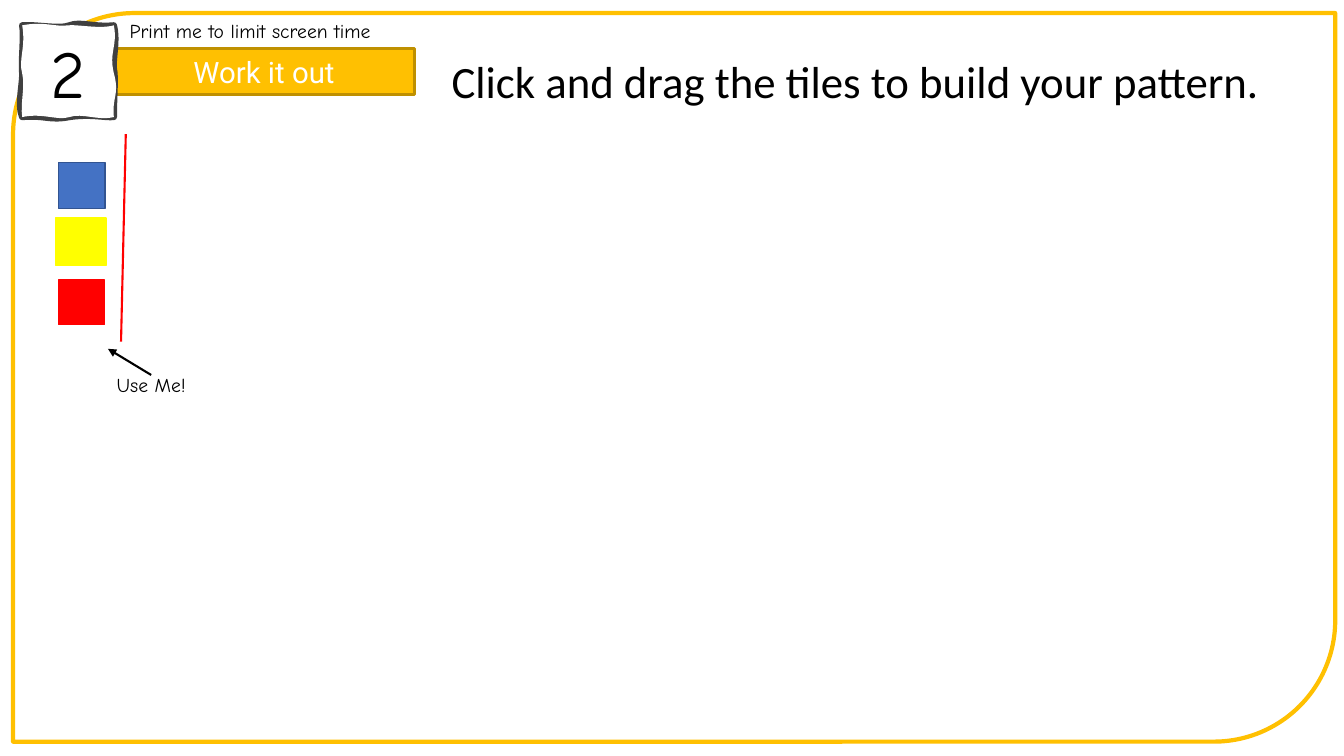
import pptx
import pptx.util
import pptx.dml.color
import pptx.enum.shapes
import pptx.enum.text
import pptx.oxml
import lxml.etree
from dataclasses import dataclass

Cm = pptx.util.Cm
Pt = pptx.util.Pt
SHAPE = pptx.enum.shapes.MSO_SHAPE
ALIGN = pptx.enum.text.PP_ALIGN
ANCHOR = pptx.enum.text.MSO_ANCHOR
FIT = pptx.enum.text.MSO_AUTO_SIZE
SPACE = "http://schemas.openxmlformats.org/drawingml/2006/main"


@dataclass(frozen=True)
class Theme:
    gold: str = "FFC001"
    bronze: str = "BF9000"
    white: str = "FFFFFF"
    black: str = "000000"
    gray: str = "404040"
    red: str = "FF0000"
    blue: str = "4472C4"
    navy: str = "325491"
    yellow: str = "FFFF00"
    hand: str = "Comic Neue"
    label: str = "Roboto"
    body: str = "Calibri"
    small: int = 14
    medium: int = 21
    large: int = 32
    huge: int = 48


THEME = Theme()

LEFT, TOP, SIDE = 0.56, 0.64, 2.31
SKETCH = [
    (0.56, 0.64),
    (0.91, 0.61), (1.5, 0.74), (1.75, 0.64),
    (2.03, 0.53), (2.36, 0.69), (2.87, 0.64),
    (2.97, 1.02), (2.84, 1.5), (2.87, 1.73),
    (2.92, 1.96), (2.87, 2.41), (2.87, 2.95),
    (2.62, 2.97), (2.29, 2.87), (1.75, 2.95),
    (1.24, 3.05), (1.14, 2.9), (0.56, 2.95),
    (0.43, 2.64), (0.58, 2.08), (0.56, 1.83),
    (0.53, 1.57), (0.61, 0.89), (0.56, 0.64),
]
PAPER = [
    (0.56, 0.64),
    (1.09, 0.53), (1.45, 0.69), (1.7, 0.64),
    (1.96, 0.61), (2.51, 0.74), (2.87, 0.64),
    (2.97, 1.17), (2.74, 1.3), (2.87, 1.85),
    (3.02, 2.39), (2.82, 2.44), (2.87, 2.95),
    (2.46, 3.05), (2.08, 2.84), (1.75, 2.95),
    (1.45, 3.05), (1.09, 2.84), (0.56, 2.95),
    (0.51, 2.57), (0.64, 2.21), (0.56, 1.85),
    (0.46, 1.5), (0.66, 1.19), (0.56, 0.64),
]


def color(code):
    return pptx.dml.color.RGBColor.from_string(code)


def node(owner, tag, **attrs):
    return lxml.etree.SubElement(owner, f"{{{SPACE}}}{tag}", attrs)


def paint(shape, fill=None, line=None, width=1):
    shape.shadow.inherit = False
    if fill:
        shape.fill.solid()
        shape.fill.fore_color.rgb = color(fill)
    else:
        shape.fill.background()
    shape.line.color.rgb = color(line)
    shape.line.width = Pt(width)


def write(shape, text, size, font, ink=THEME.black, align=ALIGN.LEFT):
    frame = shape.text_frame
    frame.text = text
    frame.word_wrap = True
    frame.auto_size = FIT.SHAPE_TO_FIT_TEXT
    para = frame.paragraphs[0]
    para.alignment = align
    style = para.runs[0].font
    style.size = Pt(size)
    style.name = font
    style.color.rgb = color(ink)


def block(slide, kind, box, fill, line, width=1):
    shape = slide.shapes.add_shape(kind, *map(Cm, box))
    paint(shape, fill, line, width)
    return shape


def note(slide, box, text, size, font):
    write(slide.shapes.add_textbox(*map(Cm, box)), text, size, font)


def stroke(slide, start, end, ink, arrow=False):
    kind = pptx.enum.shapes.MSO_CONNECTOR.STRAIGHT
    line = slide.shapes.add_connector(kind, *map(Cm, start + end))
    line.line.color.rgb = color(ink)
    line.line.width = Pt(1.5)
    props = line._element.spPr
    if arrow:
        node(props.find(f"{{{SPACE}}}ln"), "tailEnd", type="triangle")
    node(props, "effectLst")


def point(owner, knot):
    x, y = knot
    node(owner, "pt", x=str(Cm(x - LEFT)), y=str(Cm(y - TOP)))


def curve(paths, knots, **attrs):
    side = str(Cm(SIDE))
    path = node(paths, "path", w=side, h=side, **attrs)
    point(node(path, "moveTo"), knots[0])
    for first in range(1, len(knots), 3):
        bend = node(path, "cubicBezTo")
        for knot in knots[first:first + 3]:
            point(bend, knot)
    node(path, "close")


def badge(slide, text):
    right, base = LEFT + SIDE, TOP + SIDE
    build = slide.shapes.build_freeform(Cm(LEFT), Cm(TOP))
    corners = [(right, TOP), (right, base), (LEFT, base)]
    build.add_line_segments([tuple(map(Cm, knot)) for knot in corners])
    shape = build.convert_to_shape()
    paths = next(shape._element.iter(f"{{{SPACE}}}pathLst"))
    for old in list(paths):
        paths.remove(old)
    curve(paths, SKETCH, fill="none")
    curve(paths, PAPER, stroke="0")
    paint(shape, THEME.white, THEME.gray, 4.5)
    write(shape, text, THEME.huge, THEME.hand, align=ALIGN.CENTER)
    shape.text_frame.vertical_anchor = ANCHOR.MIDDLE


def main():
    deck = pptx.Presentation()
    deck.slide_width = Cm(33.87)
    deck.slide_height = Cm(19.05)
    slide = deck.slides.add_slide(deck.slide_layouts[6])

    block(slide, SHAPE.ROUND_2_DIAG_RECTANGLE, (0.33, 0.33, 33.32, 18.36),
          None, THEME.gold, 3)
    banner = block(slide, SHAPE.RECTANGLE, (2.87, 1.22, 7.57, 1.17),
                   THEME.gold, THEME.bronze, 2.25)
    write(banner, "Work it out", THEME.medium, THEME.label,
          THEME.white, ALIGN.CENTER)
    badge(slide, "2")
    stroke(slide, (3.17, 3.38), (3.05, 8.61), THEME.red)
    note(slide, (11.13, 1.22, 21.87, 1.63),
         "Click and drag the tiles to build your pattern.",
         THEME.large, THEME.body)

    tiles = [
        ((1.48, 4.09, 1.17, 1.17), THEME.blue, THEME.navy),
        ((1.4, 5.49, 1.27, 1.16), THEME.yellow, THEME.yellow),
        ((1.4, 5.53, 1.27, 1.16), THEME.yellow, THEME.yellow),
        ((1.47, 7.06, 1.17, 1.12), THEME.red, THEME.red),
    ]
    for box, fill, line in tiles:
        block(slide, SHAPE.RECTANGLE, box, fill, line)

    note(slide, (3.02, 0.36, 7.98, 0.86), "Print me to limit screen time",
         THEME.small, THEME.hand)
    note(slide, (2.69, 9.27, 2.54, 0.86), "Use Me!", THEME.small, THEME.hand)
    stroke(slide, (3.81, 9.45), (2.72, 8.79), THEME.black, arrow=True)

    deck.save("out.pptx")


if __name__ == "__main__":
    main()
